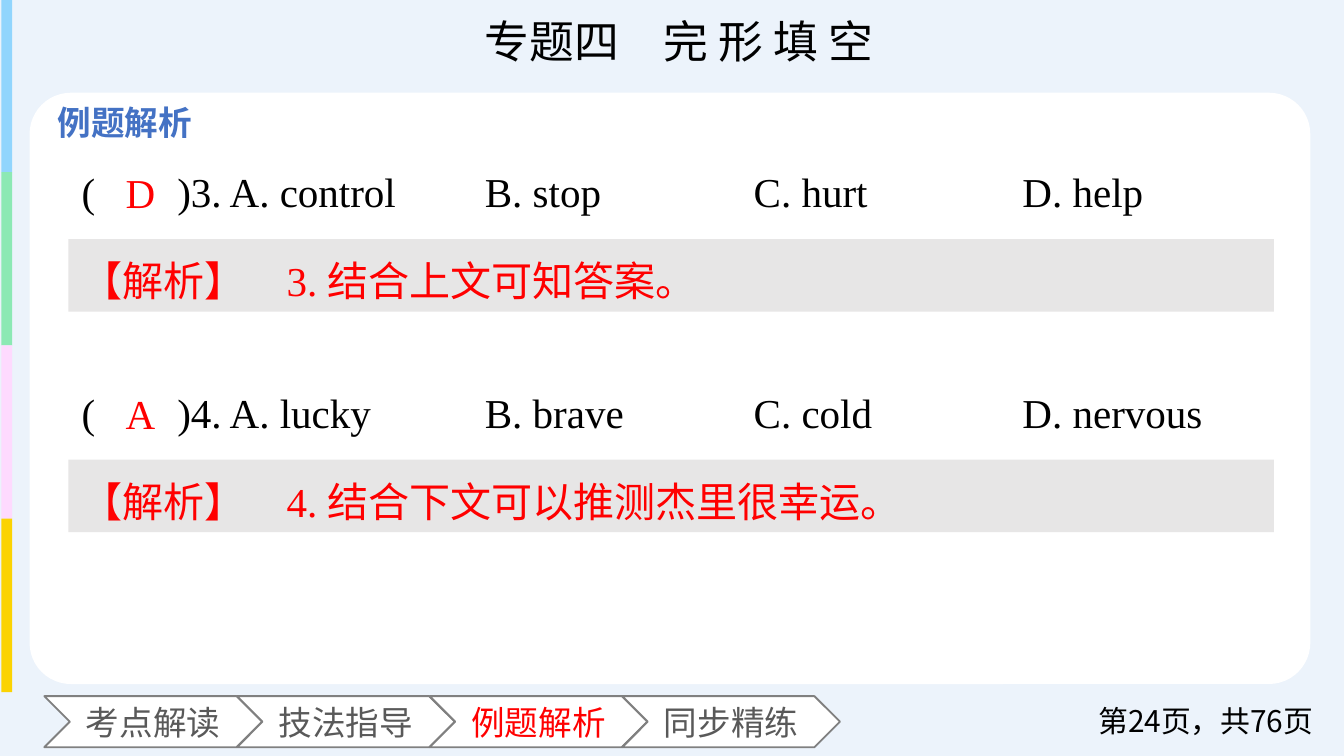
import pptx
import pptx.util
import pptx.dml.color
import pptx.enum.shapes
import pptx.enum.text
import pptx.oxml.ns
import lxml.etree

Inches = pptx.util.Inches
Shape = pptx.enum.shapes.MSO_SHAPE
Align = pptx.enum.text.PP_ALIGN
Anchor = pptx.enum.text.MSO_ANCHOR
qn = pptx.oxml.ns.qn

# Content
TITLE = "专题四　完 形 填 空"
HEAD = "例题解析"
PAGE = "第24页，共76页"
STEPS = ["考点解读", "技法指导", "例题解析", "同步精练"]
ITEMS = [
    ("D", ["(　　)3. A. control", "B. stop", "C. hurt", "D. help"],
     "【解析】　3. 结合上文可知答案。"),
    ("A", ["(　　)4. A. lucky", "B. brave", "C. cold", "D. nervous"],
     "【解析】　4. 结合下文可以推测杰里很幸运。"),
]

THEME = {
    "sans": "Noto Sans CJK SC", "serif": "Times New Roman",
    "back": "ECF3FB", "panel": "FFFFFF", "note": "E7E6E6", "edge": "808080",
    "text": "000000", "red": "FF0000", "blue": "4472C4", "gray": "595959",
    "bars": ["91D5FD", "8CE9B4", "FEDAFE", "FBD302"],
    "title": 24, "body": 22, "label": 18, "page": 16,
}


def rgb(name):
    return pptx.dml.color.RGBColor.from_string(THEME.get(name, name))


def write(shape, text, size, color, face="serif", align=Align.LEFT,
          anchor=Anchor.TOP, bold=False, space=None, tabs=(), wrap=True):
    frame = shape.text_frame
    frame.word_wrap = wrap
    frame.vertical_anchor = anchor
    para = frame.paragraphs[0]
    para.text = text
    para.alignment = align
    if space:
        para.line_spacing = space
    if tabs:
        stops = lxml.etree.SubElement(para._p.get_or_add_pPr(), qn("a:tabLst"))
        for stop in tabs:
            lxml.etree.SubElement(stops, qn("a:tab"), pos=str(Inches(stop)), algn="l")
    font = para.font
    font.name = THEME[face]
    font.size = pptx.util.Pt(THEME[size])
    font.bold = bold
    font.color.rgb = rgb(color)
    lxml.etree.SubElement(font._element, qn("a:ea"), typeface=THEME["sans"])


def block(kind, x, y, w, h, fill, line=None):
    shape = slide.shapes.add_shape(kind, Inches(x), Inches(y), Inches(w), Inches(h))
    shape.shadow.inherit = False
    shape.fill.solid()
    shape.fill.fore_color.rgb = rgb(fill)
    if line:
        shape.line.color.rgb = rgb(line)
        shape.line.width = pptx.util.Pt(1)
    else:
        shape.line.fill.background()
    return shape


def label(x, y, w, h, *args, **style):
    box = slide.shapes.add_textbox(Inches(x), Inches(y), Inches(w), Inches(h))
    write(box, *args, **style)


# A 16:9 slide
deck = pptx.Presentation()
deck.slide_width = Inches(10)
deck.slide_height = Inches(10) * 9 // 16
slide = deck.slides.add_slide(deck.slide_layouts[5])
slide.background.fill.solid()
slide.background.fill.fore_color.rgb = rgb("back")

# Title
title = slide.shapes.title
title.left, title.top = Inches(1.76), Inches(0.05)
title.width, title.height = Inches(6.58), Inches(0.5)
write(title, TITLE, "title", "text", align=Align.CENTER)
title.text_frame.auto_size = pptx.enum.text.MSO_AUTO_SIZE.NONE

# Colour bars down the left edge
for i, color in enumerate(THEME["bars"]):
    block(Shape.RECTANGLE, 0.01, 1.29 * i - 0.01, 0.08, 1.29, color)

# Panel and heading
panel = block(Shape.ROUNDED_RECTANGLE, 0.22, 0.69, 9.53, 4.4, "panel")
panel.adjustments[0] = 0.07
label(0.33, 0.71, 1.29, 0.4, HEAD, "label", "blue", face="sans", bold=True, wrap=False)

# Step chevrons
for i, step in enumerate(STEPS):
    arrow = block(Shape.CHEVRON, 0.33 + 4.3 / 3 * i, 5.18, 1.62, 0.38, "panel", "edge")
    write(arrow, step, "label", "red" if step == HEAD else "gray", face="sans",
          align=Align.CENTER, anchor=Anchor.MIDDLE, wrap=False)

# Page count
label(7.84, 5.21, 2.03, 0.3, PAGE, "page", "text", face="sans",
      align=Align.RIGHT, anchor=Anchor.MIDDLE)

# Questions, notes and answers
for i, (answer, parts, note) in enumerate(ITEMS):
    top = 1.12 + 1.64 * i
    label(0.51, top, 8.97, 0.54, "\t".join(parts), "body", "text",
          space=1.2, tabs=(3, 5, 7))
    strip = block(Shape.RECTANGLE, 0.51, top + 0.66, 8.97, 0.54, "note")
    write(strip, note, "body", "red", space=1.2)
    label(0.76, top + 0.08, 0.57, 0.47, answer, "body", "red", align=Align.CENTER)

deck.save("out.pptx")
